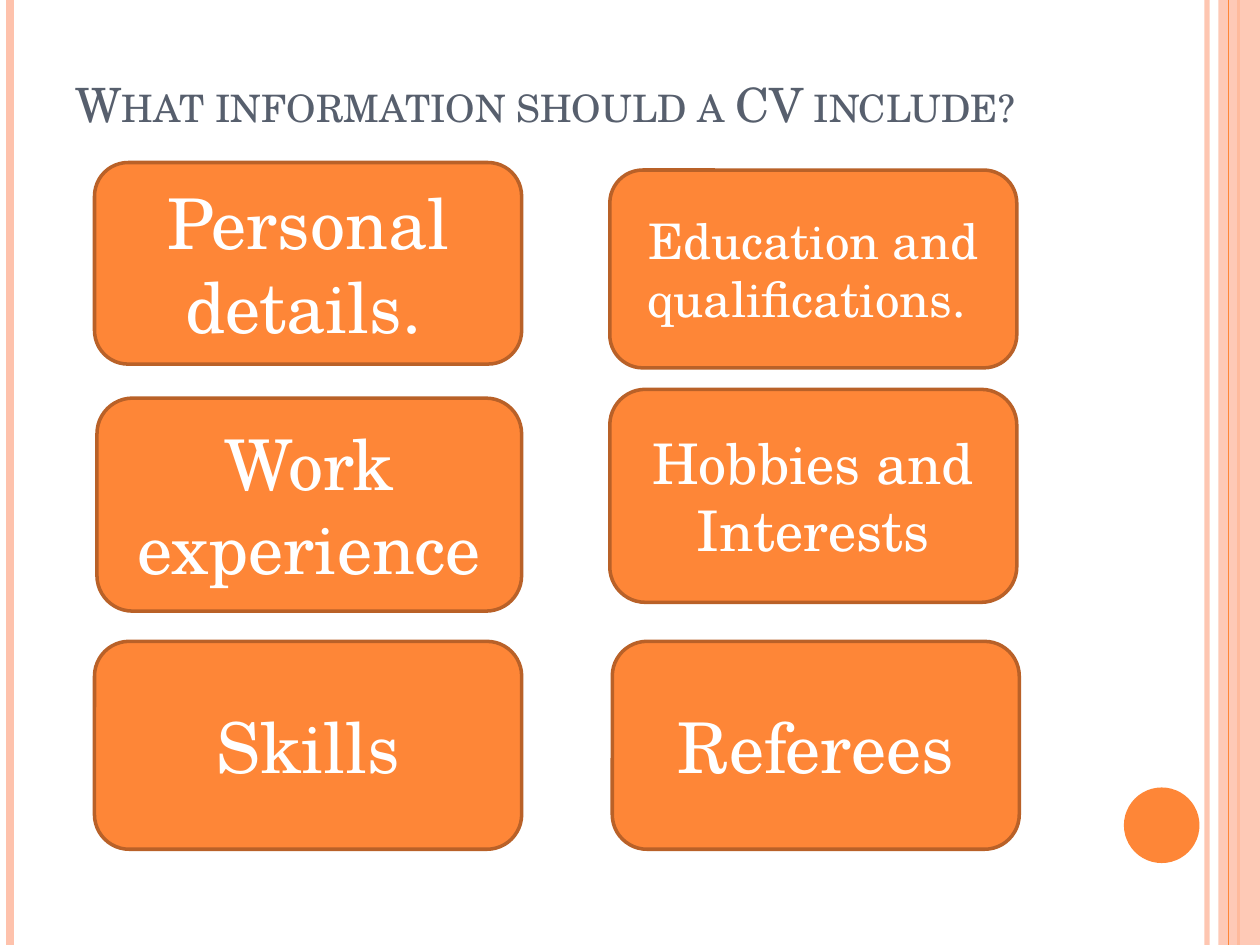
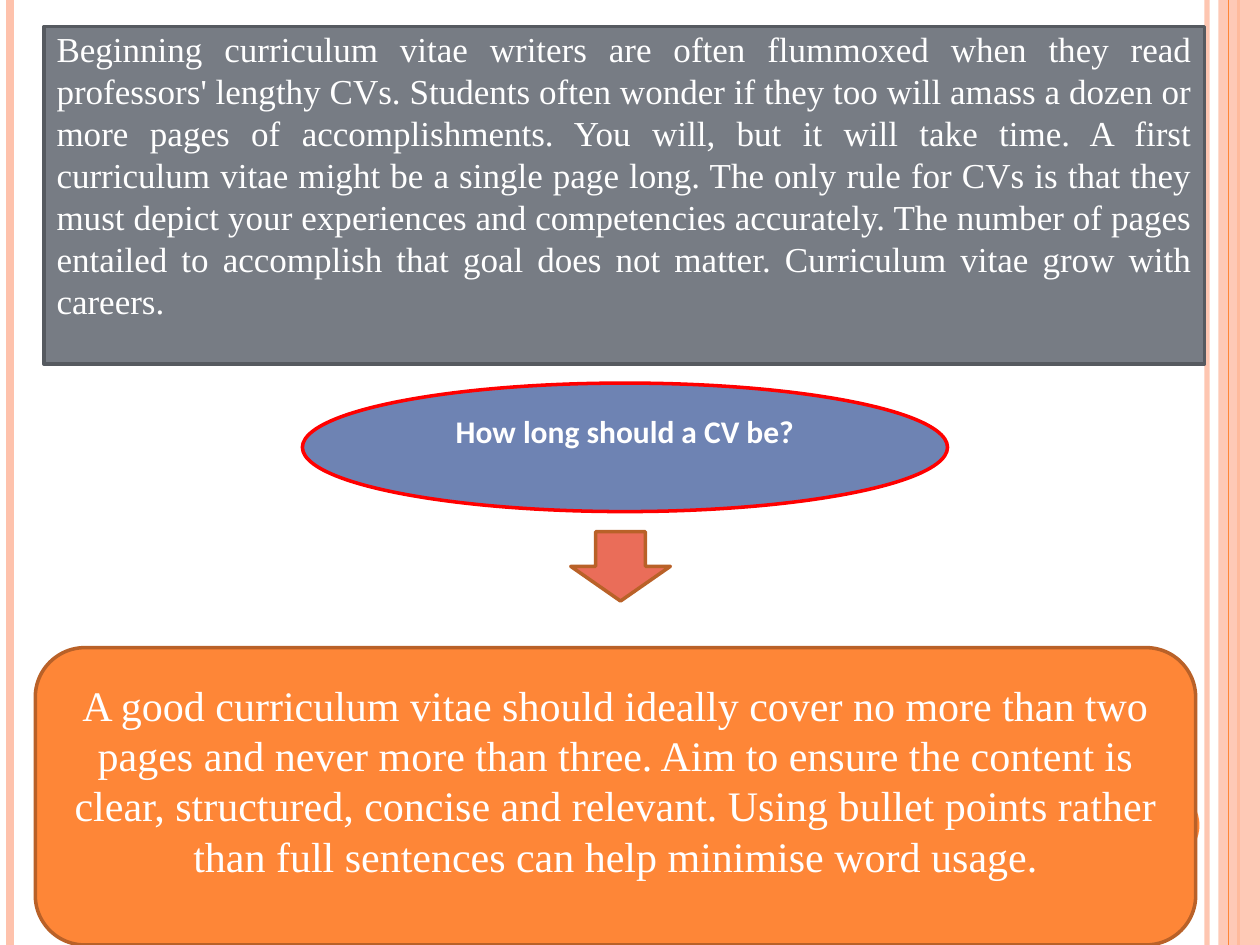
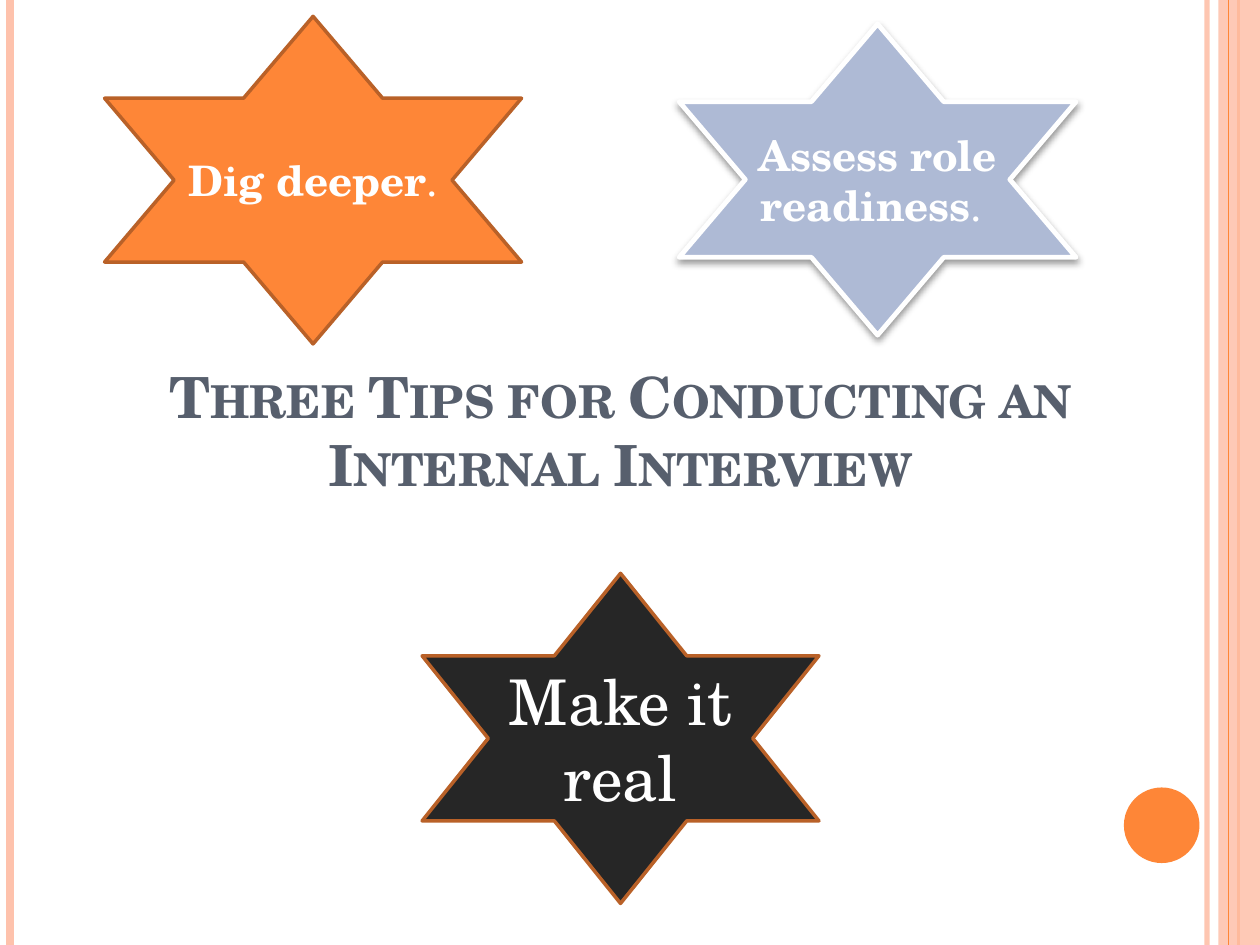
import lxml.etree
import pptx
import pptx.dml.color
import pptx.enum.shapes
import pptx.enum.text
import pptx.oxml.ns
import pptx.util

Inches = pptx.util.Inches
Pt = pptx.util.Pt
SHAPE = pptx.enum.shapes.MSO_SHAPE
ALIGN = pptx.enum.text.PP_ALIGN
ANCHOR = pptx.enum.text.MSO_ANCHOR
qn = pptx.oxml.ns.qn

COLORS = {
    "orange": "FE8637",
    "orange_edge": "B96128",
    "peach": "FEC2AC",
    "title": "575F6D",
    "white": "FFFFFF",
    "grey": "777C84",
    "grey_edge": "565A60",
    "blue": "6E83B3",
    "pale_blue": "AEBAD5",
    "red": "FF0000",
    "coral": "EA6D59",
    "charcoal": "262626",
    "black": "000000",
}
SERIF = "TeX Gyre Schola"
ROMAN = "Times New Roman"
WIDTH, HEIGHT = 10, 7.5


def rgb(name):
    return pptx.dml.color.RGBColor.from_string(COLORS[name])


def set_alpha(element, percent):
    for color in element.spPr.iter(qn("a:srgbClr")):
        lxml.etree.SubElement(color, qn("a:alpha"), val=str(percent * 1000))


def write_text(frame, *pieces, size=18, font=SERIF, color="white", bold=False,
               small_caps=False, align=ALIGN.CENTER, anchor=ANCHOR.MIDDLE,
               bottom=0.05):
    frame.word_wrap = True
    frame.auto_size = pptx.enum.text.MSO_AUTO_SIZE.NONE
    frame.vertical_anchor = anchor
    frame.margin_left = frame.margin_right = Inches(0.1)
    frame.margin_top, frame.margin_bottom = Inches(0.05), Inches(bottom)
    paragraph = frame.paragraphs[0]
    paragraph.alignment = align
    for piece in pieces:
        text, changes = piece if isinstance(piece, tuple) else (piece, {})
        run = paragraph.add_run()
        run.text = text
        run.font.name = font
        run.font.size = Pt(changes.get("size", size))
        run.font.bold = changes.get("bold", bold)
        run.font.color.rgb = rgb(color)
        if small_caps:
            run._r.get_or_add_rPr().set("cap", "small")


def add_box(slide, kind, left, top, width, height, fill="orange",
            edge="orange_edge", edge_width=2):
    shape = slide.shapes.add_shape(
        kind, Inches(left), Inches(top), Inches(width), Inches(height))
    shape.shadow.inherit = False
    shape.fill.solid()
    shape.fill.fore_color.rgb = rgb(fill)
    if edge:
        shape.line.color.rgb = rgb(edge)
        shape.line.width = Pt(edge_width)
    else:
        shape.line.fill.background()
    return shape


def add_vertical_rule(slide, x, color, width):
    rule = slide.shapes.add_connector(
        pptx.enum.shapes.MSO_CONNECTOR.STRAIGHT,
        Inches(x), Inches(0), Inches(x), Inches(HEIGHT))
    rule.line.color.rgb = rgb(color)
    rule.line.width = Pt(width)
    lxml.etree.SubElement(rule.element.spPr, qn("a:effectLst"))
    return rule


def add_soft_shadow(shape):
    effects = shape.element.spPr.find(qn("a:effectLst"))
    shadow = lxml.etree.SubElement(
        effects, qn("a:outerShdw"), blurRad=str(Pt(4)), dist=str(Pt(2)),
        dir="5400000", rotWithShape="0")
    color = lxml.etree.SubElement(shadow, qn("a:srgbClr"), val=COLORS["black"])
    lxml.etree.SubElement(color, qn("a:alpha"), val="40000")


def set_title(slide, text, left, top, **text_format):
    title = slide.shapes.title
    title.left, title.top = Inches(left), Inches(top)
    title.width, title.height = Inches(8.17), Inches(1.25)
    write_text(title.text_frame, text, color="title", small_caps=True,
               anchor=ANCHOR.BOTTOM, **text_format)


def decorate_master(presentation, slide):
    inner_rule = add_vertical_rule(slide, 9.58, "peach", 3)
    set_alpha(inner_rule.element, 93)
    left_rule = add_vertical_rule(slide, 0.08, "peach", 4.5)
    band_rule = add_vertical_rule(slide, 9.83, "orange", 1.5)
    band = add_box(slide, SHAPE.RECTANGLE, 9.67, 0, 0.33, HEIGHT, "peach", None)
    set_alpha(band.element, 87)
    thin_rule = add_vertical_rule(slide, 9.75, "orange", 0.75)
    disc = add_box(slide, SHAPE.OVAL, 8.92, 6.25, 0.6, 0.6, edge=None)
    decorations = [inner_rule, left_rule, band_rule, band, thin_rule, disc]
    master_tree = presentation.slide_master.shapes.element
    for index, shape in enumerate(decorations):
        shape.element.xpath("./*/p:cNvPr")[0].set("id", str(100 + index))
        master_tree.insert(2 + index, shape.element)


def build_contents(slide):
    set_title(slide, "What information should a CV include?", 0.5, 0.3,
              size=27, align=ALIGN.LEFT, bottom=0.5)
    cards = [
        (0.75, 1.29, 3.39, 1.6, 40, ["Personal details.", (" ", {"size": 18})]),
        (4.84, 1.35, 3.23, 1.57, 28, ["Education and qualifications. "]),
        (0.77, 3.16, 3.37, 1.69, 40, ["Work experience"]),
        (4.84, 3.09, 3.23, 1.69, 32, ["Hobbies and Interests"]),
        (0.75, 5.09, 3.39, 1.65, 40, ["Skills"]),
        (4.86, 5.09, 3.23, 1.65, 40, ["Referees"]),
    ]
    for left, top, width, height, size, pieces in cards:
        card = add_box(slide, SHAPE.ROUNDED_RECTANGLE, left, top, width, height)
        write_text(card.text_frame, *pieces, size=size)


def build_length(slide):
    introduction = add_box(slide, SHAPE.RECTANGLE, 0.35, 0.21, 9.21, 2.68,
                           "grey", "grey_edge")
    write_text(
        introduction.text_frame,
        "Beginning curriculum vitae writers are often flummoxed when they read "
        "professors' lengthy CVs. Students often wonder if they too will amass "
        "a dozen or more pages of accomplishments. You will, but it will take "
        "time. A first curriculum vitae might be a single page long. The only "
        "rule for CVs is that they must depict your experiences and "
        "competencies accurately. The number of pages entailed to accomplish "
        "that goal does not matter. Curriculum vitae grow with careers.",
        size=20, font=ROMAN, align=ALIGN.JUSTIFY, bottom=0.38)
    question = add_box(slide, SHAPE.OVAL, 2.4, 3.04, 5.12, 1.02, "blue", "red")
    write_text(question.text_frame, "How long should a CV be?",
               font="Calibri", bold=True, bottom=0.31)
    answer = add_box(slide, SHAPE.ROUNDED_RECTANGLE, 0.28, 5.14, 9.21, 2.36)
    write_text(
        answer.text_frame,
        "A good curriculum vitae should ideally cover no more than two pages "
        "and never more than three. Aim to ensure the content is clear, "
        "structured, concise and relevant. Using bullet points rather than "
        "full sentences can help minimise word usage.",
        size=24, font=ROMAN, bottom=0.31)
    add_box(slide, SHAPE.DOWN_ARROW, 4.53, 4.22, 0.79, 0.55, "coral")


def build_tips(slide):
    set_title(slide, "Three Tips for Conducting an Internal Interview",
              0.84, 3.29, size=32.4, bold=True, bottom=0.59)
    full_stop = (". ", {"bold": False})
    real = add_box(slide, SHAPE.STAR_6_POINT, 3.35, 4.55, 3.15, 2.62, "charcoal")
    write_text(real.text_frame, "Make it real", size=36)
    readiness = add_box(slide, SHAPE.STAR_6_POINT, 5.39, 0.19, 3.15, 2.47,
                        "pale_blue", "white", 2.75)
    add_soft_shadow(readiness)
    write_text(readiness.text_frame, "Assess role readiness", full_stop,
               size=24, bold=True)
    deeper = add_box(slide, SHAPE.STAR_6_POINT, 0.83, 0.13, 3.31, 2.6)
    write_text(deeper.text_frame, "Dig deeper", full_stop, size=24, bold=True)


def main():
    presentation = pptx.Presentation()
    presentation.slide_width = Inches(WIDTH)
    presentation.slide_height = Inches(HEIGHT)
    title_only, blank = presentation.slide_layouts[5], presentation.slide_layouts[6]
    contents = presentation.slides.add_slide(title_only)
    decorate_master(presentation, contents)
    build_contents(contents)
    build_length(presentation.slides.add_slide(blank))
    build_tips(presentation.slides.add_slide(title_only))
    presentation.save("out.pptx")


if __name__ == "__main__":
    main()
